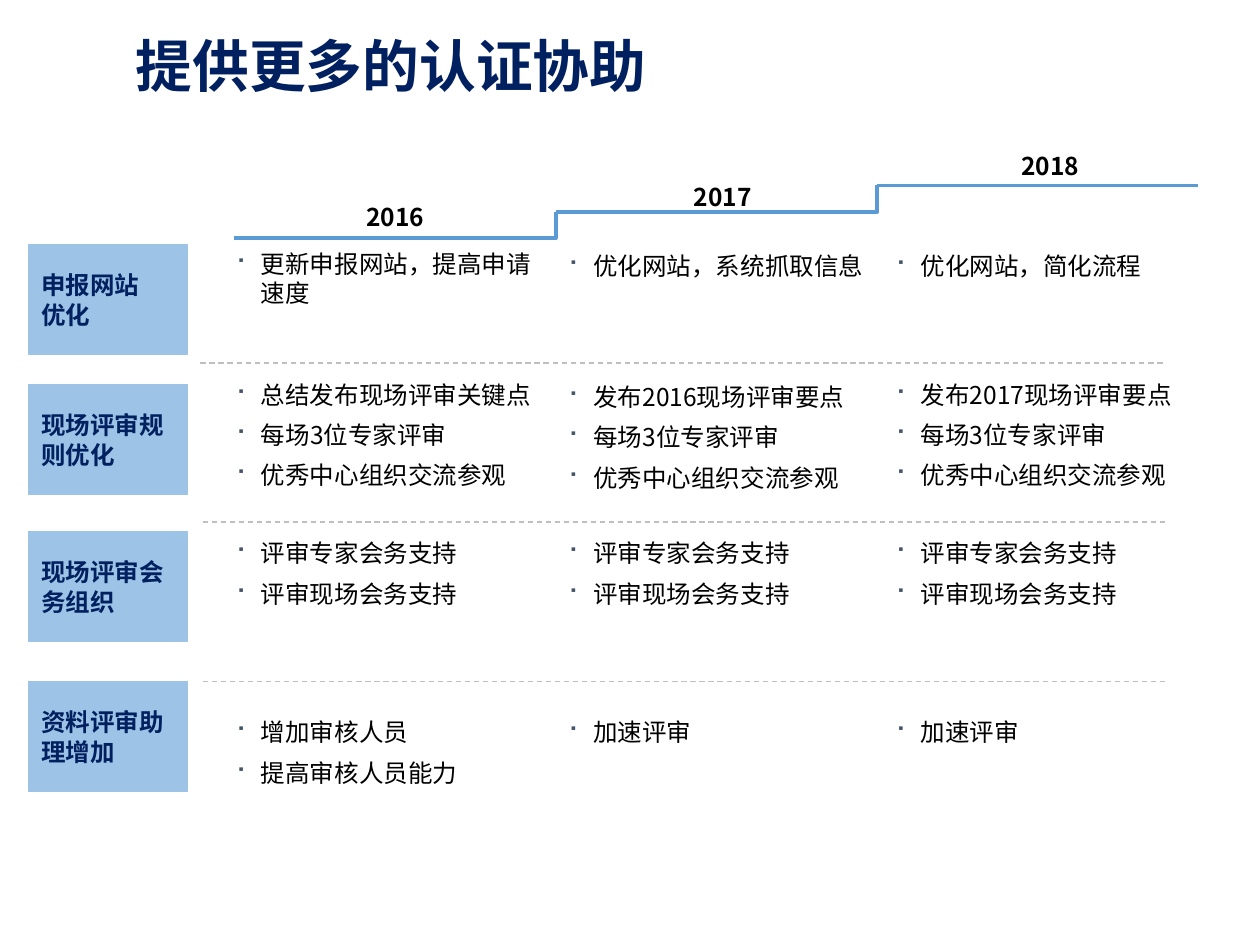
from dataclasses import dataclass

from lxml import etree
from pptx import Presentation
from pptx.dml.color import RGBColor
from pptx.enum.dml import MSO_LINE
from pptx.enum.shapes import MSO_CONNECTOR, MSO_SHAPE
from pptx.enum.text import MSO_ANCHOR, MSO_AUTO_SIZE, PP_ALIGN
from pptx.oxml.ns import qn
from pptx.util import Cm, Pt

DASH = MSO_LINE.DASH
STRAIGHT = MSO_CONNECTOR.STRAIGHT
RECT = MSO_SHAPE.RECTANGLE
TOP, MIDDLE = MSO_ANCHOR.TOP, MSO_ANCHOR.MIDDLE
GROW = MSO_AUTO_SIZE.SHAPE_TO_FIT_TEXT
LEFT = PP_ALIGN.LEFT


@dataclass(frozen=True)
class Theme:
    font: str = "Noto Sans CJK SC"
    navy: RGBColor = RGBColor(0x00, 0x20, 0x60)
    black: RGBColor = RGBColor(0, 0, 0)
    step: RGBColor = RGBColor(0x5B, 0x9B, 0xD5)
    label: RGBColor = RGBColor(0x9D, 0xC3, 0xE6)
    divider: RGBColor = RGBColor(0xBF, 0xBF, 0xBF)
    bullet: str = "44546A"
    title_size: Pt = Pt(32.4)
    body_size: Pt = Pt(14)
    line: Pt = Pt(17)
    gap: Pt = Pt(6)


T = Theme()
TITLE = {"size": T.title_size, "bold": True, "color": T.navy, "spacing": 0.9}
LABEL = {"size": T.body_size, "bold": True, "color": T.navy, "spacing": T.line}
YEAR = {**LABEL, "color": T.black}
BODY = {**YEAR, "bold": False}


def write(sp, lines, style, bulleted=False, **frame):
    """Fill a shape with one paragraph per line; frame holds text frame settings."""
    tf = sp.text_frame
    for name, value in {"word_wrap": True, "vertical_anchor": TOP, **frame}.items():
        setattr(tf, name, value)
    for i, line in enumerate(lines):
        p = tf.paragraphs[0] if i == 0 else tf.add_paragraph()
        p.alignment = LEFT
        p.line_spacing = style["spacing"]
        if bulleted:
            add_bullet(p)
            if i:
                p.space_before = T.gap
        r = p.add_run()
        r.text = line
        font = {"size": style["size"], "bold": style["bold"], "name": T.font}
        for name, value in font.items():
            setattr(r.font, name, value)
        r.font.color.rgb = style["color"]
        etree.SubElement(r.font._element, qn("a:ea"), typeface=T.font)


def add_bullet(p):
    pPr = p._p.get_or_add_pPr()
    pPr.set("marL", str(Cm(0.51)))
    pPr.set("indent", str(-Cm(0.51)))
    color = etree.SubElement(pPr, qn("a:buClr"))
    etree.SubElement(color, qn("a:srgbClr"), val=T.bullet)
    etree.SubElement(pPr, qn("a:buFont"), typeface="Wingdings")
    etree.SubElement(pPr, qn("a:buChar"), char="■")


prs = Presentation()
prs.slide_width, prs.slide_height = Cm(25.4), Cm(19.05)
s = prs.slides.add_slide(prs.slide_layouts[6])

# Title
sp = s.shapes.add_textbox(Cm(2.49), Cm(0.94), Cm(22.9), Cm(1.42))
write(sp, ["提供更多的认证协助"], TITLE, vertical_anchor=MIDDLE,
      margin_top=0, margin_bottom=Cm(0.5))

# Staircase of years
STEP_WIDTH, STEP_RISE = 6.48, 0.53
years = [("2016", 3.94), ("2017", 3.53), ("2018", 2.92)]
for i, (year, year_top) in enumerate(years):
    x, y = 4.72 + i * STEP_WIDTH, 4.8 - i * STEP_RISE
    points = [(x + STEP_WIDTH, y)]
    if i < len(years) - 1:
        points.append((x + STEP_WIDTH, y - STEP_RISE))
    builder = s.shapes.build_freeform(Cm(x), Cm(y))
    builder.add_line_segments([(Cm(px), Cm(py)) for px, py in points], close=False)
    sp = builder.convert_to_shape()
    sp.shadow.inherit = False
    sp.fill.background()
    sp.line.color.rgb = T.step
    sp.line.width = Pt(2.25)

    sp = s.shapes.add_textbox(Cm(7.14 + i * 6.6), Cm(year_top), Cm(2.18), Cm(0.86))
    write(sp, [year], YEAR, auto_size=GROW)

# Rows: label top, label lines, then (top, bullets) for each year
column_lefts = [4.5, 11.2, 17.8]
review = ["每场3位专家评审", "优秀中心组织交流参观"]
support = ["评审专家会务支持", "评审现场会务支持"]
rows = [
    (4.93, ["申报网站", "优化"], [
        (4.88, ["更新申报网站，提高申请速度"]),
        (4.93, ["优化网站，系统抓取信息"]),
        (4.93, ["优化网站，简化流程"])]),
    (7.75, ["现场评审规则优化"], [
        (7.52, ["总结发布现场评审关键点", *review]),
        (7.57, ["发布2016现场评审要点", *review]),
        (7.52, ["发布2017现场评审要点", *review])]),
    (10.72, ["现场评审会务组织"], [(10.72, support)] * 3),
    (13.74, ["资料评审助理增加"], [
        (14.33, ["增加审核人员", "提高审核人员能力"]),
        (14.33, ["加速评审"]),
        (14.33, ["加速评审"])]),
]
for label_top, label, cells in rows:
    sp = s.shapes.add_shape(RECT, Cm(0.58), Cm(label_top), Cm(3.2), Cm(2.21))
    sp.shadow.inherit = False
    sp.fill.solid()
    sp.fill.fore_color.rgb = T.label
    sp.line.color.rgb = T.label
    sp.line.width = Pt(0.75)
    write(sp, label, LABEL, vertical_anchor=MIDDLE)

    for left, (top, bullets) in zip(column_lefts, cells):
        height = Cm(0.25) + len(bullets) * T.line + (len(bullets) - 1) * T.gap
        sp = s.shapes.add_textbox(Cm(left), Cm(top), Cm(6.5), height)
        write(sp, bullets, BODY, bulleted=True, auto_size=GROW)

# Dividers between rows
for left, y in [(4.04, 7.32), (4.09, 10.52), (4.09, 13.74)]:
    line = s.shapes.add_connector(STRAIGHT, Cm(left), Cm(y), Cm(left + 19.45), Cm(y))
    line.line.color.rgb = T.divider
    line.line.width = Pt(0.75)
    line.line.dash_style = DASH
    etree.SubElement(line._element.spPr, qn("a:effectLst"))

prs.save("out.pptx")
